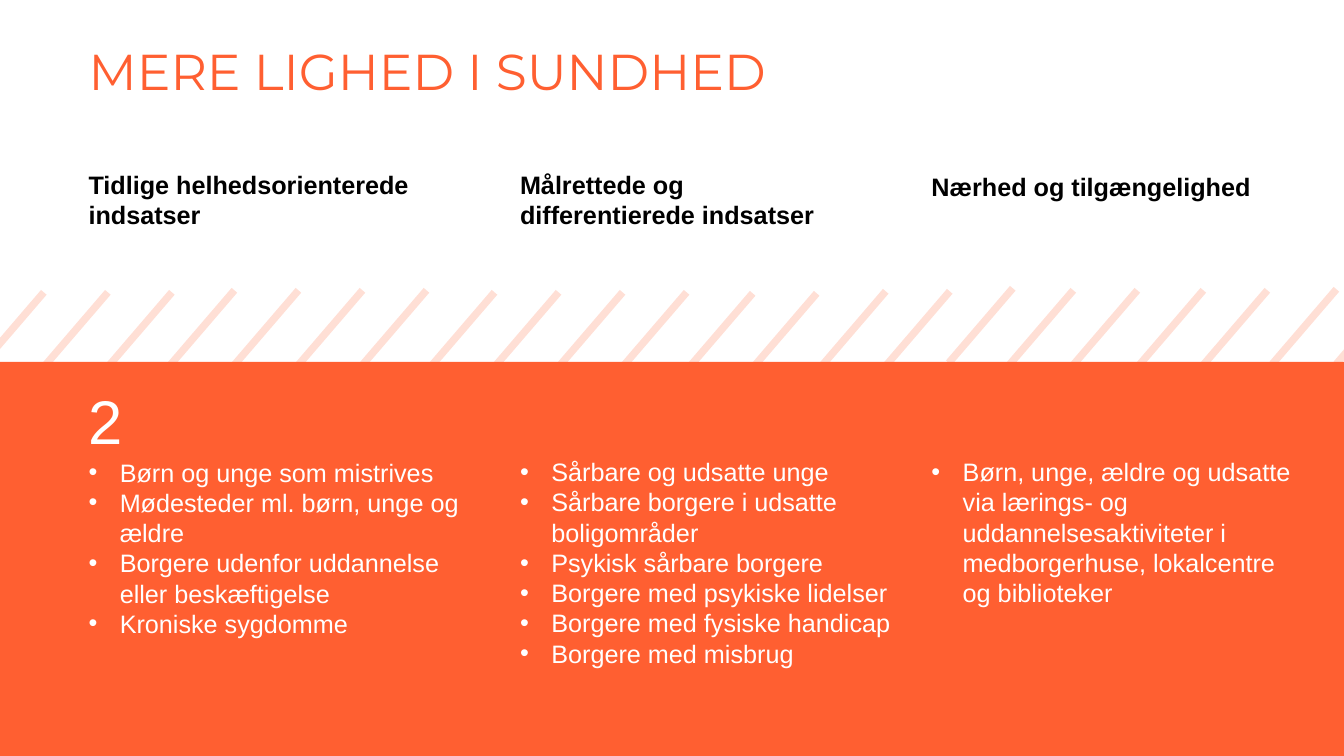
from lxml import etree
from pptx import Presentation
from pptx.dml.color import RGBColor
from pptx.enum.shapes import MSO_CONNECTOR, MSO_SHAPE
from pptx.enum.text import MSO_ANCHOR, MSO_AUTO_SIZE, PP_ALIGN
from pptx.oxml.ns import qn
from pptx.util import Inches, Pt

LEFT = PP_ALIGN.LEFT
TOP = MSO_ANCHOR.TOP
NO_AUTOFIT = MSO_AUTO_SIZE.NONE
RECTANGLE = MSO_SHAPE.RECTANGLE
STRAIGHT = MSO_CONNECTOR.STRAIGHT

COLORS = {"orange": "FF5F31", "white": "FFFFFF", "black": "000000"}

HEADINGS = [
    (0.78, 1.63, 3.41, 0.71, "Tidlige helhedsorienterede indsatser"),
    (5.06, 1.63, 3.13, 0.71, "Målrettede og differentierede indsatser"),
    (9.14, 1.65, 3.52, 0.4, "Nærhed og tilgængelighed"),
]
YOUTH = [
    "Børn og unge som mistrives",
    "Mødesteder ml. børn, unge og ældre",
    "Borgere udenfor uddannelse eller beskæftigelse",
    "Kroniske sygdomme",
]
VULNERABLE = [
    "Sårbare og udsatte unge",
    "Sårbare borgere i udsatte boligområder",
    "Psykisk sårbare borgere",
    "Borgere med psykiske lidelser",
    "Borgere med fysiske handicap",
    "Borgere med misbrug",
]
LOCAL = [
    "Børn, unge, ældre og udsatte via lærings- og uddannelsesaktiviteter i "
    "medborgerhuse, lokalcentre og biblioteker",
]
STRIPE_GROUPS = [
    (-0.2, 3.64, 3), (1.69, 3.62, 4), (4.27, 3.64, 4),
    (6.83, 3.65, 2), (8.15, 3.63, 2), (9.41, 3.6, 1),
    (10.01, 3.62, 2), (11.3, 3.62, 2), (12.62, 3.61, 2),
]
STRIPE_STEP = 0.635
STRIPE_HEIGHT = 0.74


def rgb(name):
    return RGBColor.from_string(COLORS[name])


def add_bullet(p):
    pPr = p._p.get_or_add_pPr()
    pPr.set("marL", str(Inches(0.31)))
    pPr.set("indent", str(-Inches(0.31)))
    etree.SubElement(pPr, qn("a:buFont")).set("typeface", "Arial")
    etree.SubElement(pPr, qn("a:buChar")).set("char", "•")


def add_paragraph(tf, text, size=18, color="white", font="Arial", bold=False, bullet=False):
    p = tf.add_paragraph() if tf.text else tf.paragraphs[0]
    p.alignment = LEFT
    if bullet:
        add_bullet(p)
    r = p.add_run()
    r.text = text
    r.font.name = font
    r.font.size = Pt(size)
    r.font.bold = bold
    r.font.color.rgb = rgb(color)


def prepare_frame(sp):
    tf = sp.text_frame
    tf.word_wrap = True
    tf.auto_size = NO_AUTOFIT
    tf.vertical_anchor = TOP
    return tf


def add_text_box(s, left, top, width, height):
    sp = s.shapes.add_textbox(Inches(left), Inches(top), Inches(width), Inches(height))
    return prepare_frame(sp)


def add_title(s, text):
    sp = s.shapes.title
    sp.left, sp.top = Inches(0.78), Inches(0.35)
    sp.width, sp.height = Inches(11.7), Inches(0.71)
    add_paragraph(prepare_frame(sp), text, size=36, color="orange", font="Montserrat")


def add_band(s):
    sp = s.shapes.add_shape(RECTANGLE, 0, Inches(3.59), Inches(13.33), Inches(3.91))
    sp.shadow.inherit = False
    sp.fill.solid()
    sp.fill.fore_color.rgb = rgb("orange")
    sp.line.fill.background()


def add_stripe(s, x, bottom):
    sp = s.shapes.add_connector(
        STRAIGHT, Inches(x), Inches(bottom),
        Inches(x + STRIPE_STEP), Inches(bottom - STRIPE_HEIGHT))
    sp.line.width = Pt(5.25)
    sp.line.color.rgb = rgb("orange")
    spPr = sp._element.spPr
    color = spPr.find(".//" + qn("a:srgbClr"))
    etree.SubElement(color, qn("a:alpha")).set("val", "20000")
    etree.SubElement(spPr, qn("a:effectLst"))


def add_bullets(tf, items):
    for item in items:
        add_paragraph(tf, item, bullet=True)


def main():
    prs = Presentation()
    prs.slide_width, prs.slide_height = Inches(13.33), Inches(7.5)
    s = prs.slides.add_slide(prs.slide_layouts[5])
    add_band(s)
    add_title(s, "MERE LIGHED I SUNDHED")
    for left, top, width, height, text in HEADINGS:
        tf = add_text_box(s, left, top, width, height)
        add_paragraph(tf, text, color="black", bold=True)
    for start, bottom, count in STRIPE_GROUPS:
        for i in range(count):
            add_stripe(s, start + i * STRIPE_STEP, bottom)
    tf = add_text_box(s, 0.78, 3.75, 4, 2.75)
    add_paragraph(tf, "2", size=44)
    add_bullets(tf, YOUTH)
    add_bullets(add_text_box(s, 5.06, 4.48, 4.11, 2.52), VULNERABLE)
    add_bullets(add_text_box(s, 9.14, 4.48, 3.85, 1.92), LOCAL)
    prs.save("out.pptx")


if __name__ == "__main__":
    main()
